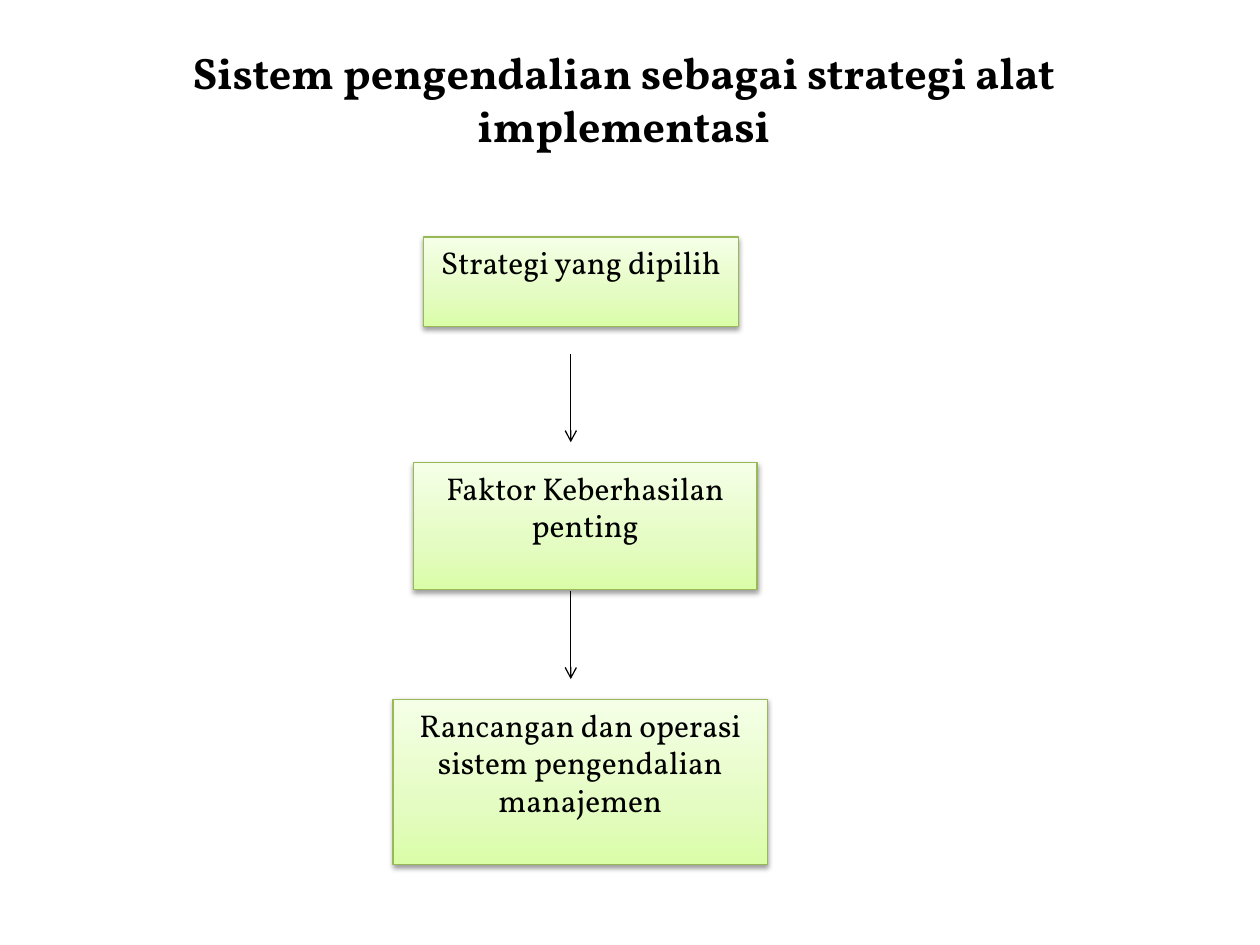
from typing import NamedTuple

from lxml import etree
from pptx import Presentation
from pptx.dml.color import RGBColor
from pptx.enum.shapes import MSO_CONNECTOR as Conn, MSO_SHAPE as Shape
from pptx.enum.text import MSO_ANCHOR as Anchor, MSO_AUTO_SIZE as AutoSize, PP_ALIGN as Align
from pptx.oxml.ns import qn
from pptx.util import Emu, Inches, Pt

# Grid of 100 columns by 75 rows, each cell 0.1 inch
CELL = Inches(0.1)
FONT = "Vollkorn"
BLACK = "000000"
GREEN_EDGE = "98B955"
GREEN_STOPS = ((0, "DAFDA7"), (35, "E4FCC2"), (100, "F5FFE7"))
TITLE_FORMAT = {"name": FONT, "size": Pt(25.2), "bold": True}
STEP_FORMAT = {"name": FONT, "size": Pt(18), "bold": False}


class Step(NamedTuple):
    text: str
    col: float
    row: float
    cols: float
    rows: float


class Arrow(NamedTuple):
    col: float
    row: float
    rows: float


TITLE = Step("Sistem pengendalian sebagai strategi alat implementasi", 7, 6.2, 85, 7)
STEPS = (
    Step("Strategi yang dipilih", 33.6, 18.8, 25, 7.1),
    Step("Faktor Keberhasilan penting", 32.8, 36.7, 27.3, 10.1),
    Step("Rancangan dan operasi sistem pengendalian manajemen", 31.2, 55.5, 29.7, 13.1),
)
ARROWS = tuple(Arrow(45.3, row, 7) for row in (28.1, 46.9))


def grid(n: float) -> Emu:
    return Emu(round(n * CELL))


def rgb(value: str) -> RGBColor:
    return RGBColor.from_string(value)


def add(parent, tag: str, **attrs):
    return etree.SubElement(parent, qn(tag), {k: str(v) for k, v in attrs.items()})


def write(sp, text: str, anchor, formats: dict):
    """Put one centred paragraph into a shape."""
    tf = sp.text_frame
    for name, value in {"word_wrap": True, "auto_size": AutoSize.NONE,
                        "vertical_anchor": anchor}.items():
        setattr(tf, name, value)
    p = tf.paragraphs[0]
    p.alignment = Align.CENTER
    r = p.add_run()
    r.text = text
    for name, value in formats.items():
        setattr(r.font, name, value)
    r.font.color.rgb = rgb(BLACK)


def fill_green(sp):
    sp.fill.gradient()
    sp.fill.gradient_angle = 90
    stops = sp.fill._fill._gradFill.find(qn("a:gsLst"))
    for old in list(stops):
        stops.remove(old)
    for share, colour in GREEN_STOPS:
        add(add(stops, "a:gs", pos=share * 1000), "a:srgbClr", val=colour)


def add_shadow(sp):
    sp.shadow.inherit = False
    effects = sp._element.spPr.find(qn("a:effectLst"))
    shadow = add(effects, "a:outerShdw", blurRad=Pt(3.1), dist=Pt(1.6),
                 dir=90 * 60000, rotWithShape=0)
    add(add(shadow, "a:srgbClr", val=BLACK), "a:alpha", val=38000)


def draw_title(s, title: Step):
    sp = s.shapes.add_textbox(*map(grid, title[1:]))
    # The deep lower margin lifts the two lines above the middle
    sp.text_frame.margin_bottom = Inches(0.43)
    write(sp, title.text, Anchor.MIDDLE, TITLE_FORMAT)


def draw_step(s, step: Step):
    sp = s.shapes.add_shape(Shape.RECTANGLE, *map(grid, step[1:]))
    fill_green(sp)
    sp.line.color.rgb = rgb(GREEN_EDGE)
    sp.line.width = Pt(0.75)
    add_shadow(sp)
    write(sp, step.text, Anchor.TOP, STEP_FORMAT)


def draw_arrow(s, arrow: Arrow):
    x = grid(arrow.col)
    line = s.shapes.add_connector(Conn.STRAIGHT, x, grid(arrow.row),
                                  x, grid(arrow.row + arrow.rows))
    line.line.color.rgb = rgb(BLACK)
    line.line.width = Pt(0.75)
    add(line.line._get_or_add_ln(), "a:tailEnd", type="arrow")
    add(line._element.spPr, "a:effectLst")


def main():
    prs = Presentation()
    prs.slide_width, prs.slide_height = grid(100), grid(75)
    s = prs.slides.add_slide(prs.slide_layouts[6])

    # Heading
    draw_title(s, TITLE)
    # Flow from strategy to control system
    for step in STEPS:
        draw_step(s, step)
    for arrow in ARROWS:
        draw_arrow(s, arrow)

    prs.save("out.pptx")


if __name__ == "__main__":
    main()
